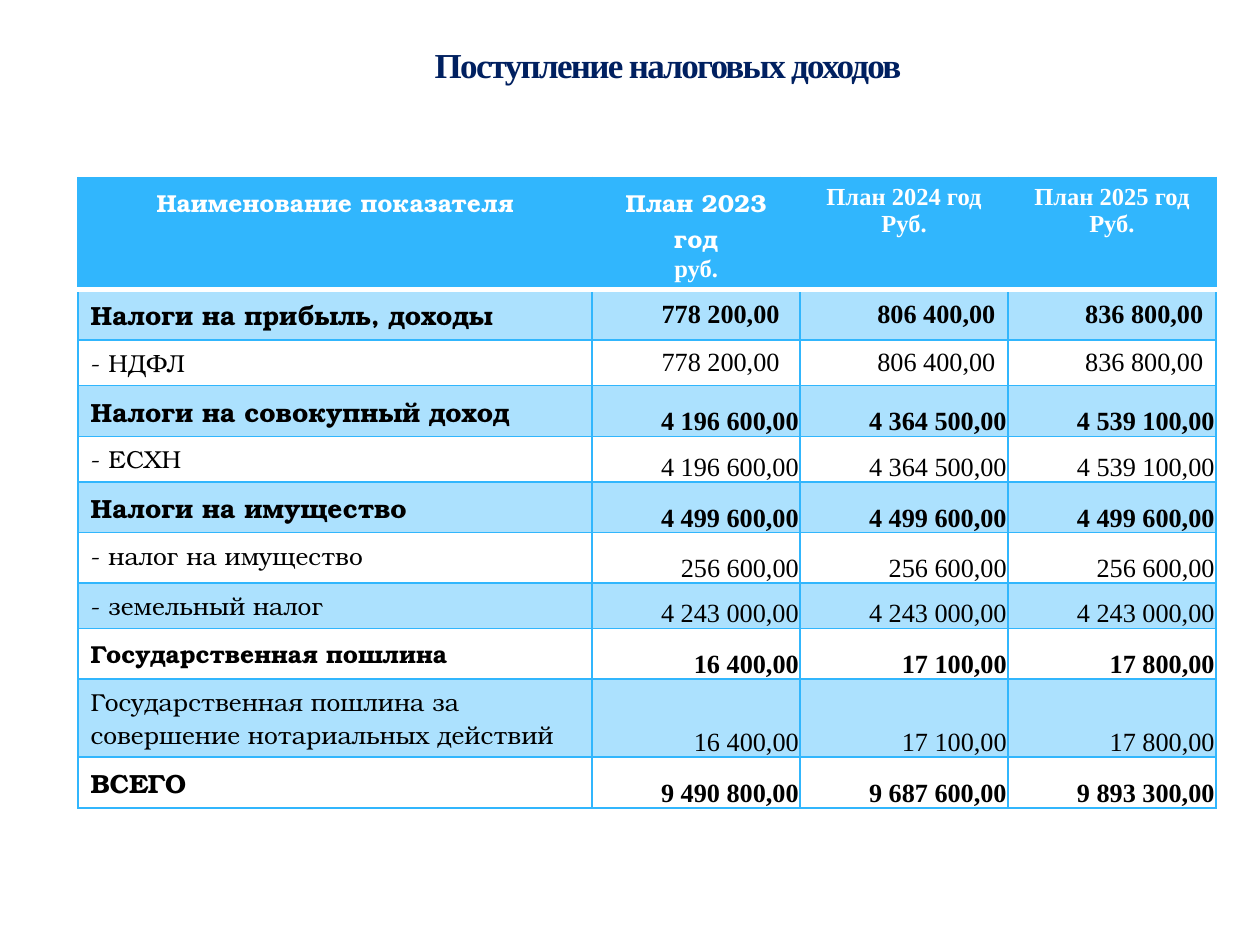
"""Build a slide with a table of planned tax revenues for 2023-2025."""
from lxml import etree
from pptx import Presentation, util as u
from pptx.dml import color
from pptx.enum import text
from pptx.oxml import ns

SERIF, BOOK = "Times New Roman", "TeX Gyre Bonum"
BLUE, WHITE, BLACK, NAVY = "31B6FD", "FFFFFF", "000000", "002060"


def style(paragraph, font, size, bold, ink, align):
    paragraph.alignment = align
    for run in paragraph.runs:
        run.font.name, run.font.size, run.font.bold = font, u.Pt(size), bold
        run.font.color.rgb = color.RGBColor.from_string(ink)


def frame_cell(cell, bottom, bottom_width):
    for side in ("L", "R", "T", "B"):
        ink, width = (bottom, bottom_width) if side == "B" else (BLUE, 1)
        edge = etree.SubElement(cell._tc.get_or_add_tcPr(), ns.qn(f"a:ln{side}"), w=str(u.Pt(width)))
        paint = etree.SubElement(edge, ns.qn("a:solidFill"))
        etree.SubElement(paint, ns.qn("a:srgbClr"), val=ink)


headings = ["Наименование показателя", "План 2023 год\nруб.", "План 2024 год\nРуб.", "План 2025 год\nРуб."]
revenues = [
    ("Налоги на прибыль, доходы", "778 200,00\t", "806 400,00", "836 800,00", 15, True, 0.4),
    ("- НДФЛ", "778 200,00\t", "806 400,00", "836 800,00", 14, False, 0.36),
    ("Налоги на совокупный доход", "4 196 600,00", "4 364 500,00", "4 539 100,00", 15, True, 0.4),
    ("- ЕСХН", "4 196 600,00", "4 364 500,00", "4 539 100,00", 14, False, 0.36),
    ("Налоги на имущество", "4 499 600,00", "4 499 600,00", "4 499 600,00", 15, True, 0.4),
    ("- налог на имущество", "256 600,00", "256 600,00", "256 600,00", 14, False, 0.4),
    ("- земельный налог", "4 243 000,00", "4 243 000,00", "4 243 000,00", 14, False, 0.36),
    ("Государственная пошлина", "16 400,00", "17 100,00", "17 800,00", 14, True, 0.4),
    ("Государственная пошлина за совершение нотариальных действий",
     "16 400,00", "17 100,00", "17 800,00", 14, False, 0.62),
    ("ВСЕГО", "9 490 800,00", "9 687 600,00", "9 893 300,00", 15, True, 0.4),
]

deck = Presentation()
deck.slide_width, deck.slide_height = u.Inches(10), u.Inches(7.5)
slide = deck.slides.add_slide(deck.slide_layouts[6])

heights = [0.88] + [revenue[-1] for revenue in revenues]
widths = [4.08] + [1.65] * 3
plan = slide.shapes.add_table(len(heights), len(widths), u.Inches(0.62), u.Inches(1.41),
                              u.Inches(sum(widths)), u.Inches(sum(heights))).table
plan.horz_banding = False
for column, width in zip(plan.columns, widths):
    column.width = u.Inches(width)
for row, height in zip(plan.rows, heights):
    row.height = u.Inches(height)

for c, heading in enumerate(headings):
    cell = plan.cell(0, c)
    cell.text_frame.text = heading
    frame_cell(cell, WHITE, 3)
    cell.fill.solid()
    cell.fill.fore_color.rgb = color.RGBColor.from_string(BLUE)
    for n, line in enumerate(cell.text_frame.paragraphs):
        font = BOOK if c < 2 and n == 0 else SERIF
        style(line, font, 14, True, WHITE, text.PP_ALIGN.CENTER)

for r, (label, *amounts, label_size, bold, _) in enumerate(revenues, 1):
    for c, content in enumerate([label] + amounts):
        cell = plan.cell(r, c)
        cell.text_frame.text = content
        frame_cell(cell, BLUE, 1)
        if r % 2:
            cell.fill.solid()
            cell.fill.fore_color.rgb = color.RGBColor.from_string(BLUE)
            tint = cell._tc.tcPr.find(ns.qn("a:solidFill"))[0]
            etree.SubElement(tint, ns.qn("a:alpha"), val="40000")
        else:
            cell.fill.background()
        line = cell.text_frame.paragraphs[0]
        if c == 0:
            style(line, BOOK, label_size, bold, BLACK, text.PP_ALIGN.LEFT)
            continue
        style(line, SERIF, 15, bold, BLACK, text.PP_ALIGN.RIGHT)
        cell.vertical_anchor = text.MSO_ANCHOR.MIDDLE
        if r > 2:
            cell.vertical_anchor = text.MSO_ANCHOR.BOTTOM
            cell.margin_left = cell.margin_right = cell.margin_top = u.Inches(0.01)
            cell.margin_bottom = 0

title = slide.shapes.add_textbox(u.Inches(1.64), u.Inches(0.24), u.Inches(7.32), u.Inches(0.55)).text_frame
title.word_wrap = True
title.vertical_anchor = text.MSO_ANCHOR.MIDDLE
title.text = "Поступление налоговых доходов"
style(title.paragraphs[0], SERIF, 20, True, NAVY, text.PP_ALIGN.CENTER)
title.paragraphs[0].runs[0].font._element.set("spc", "-100")

deck.save("out.pptx")
